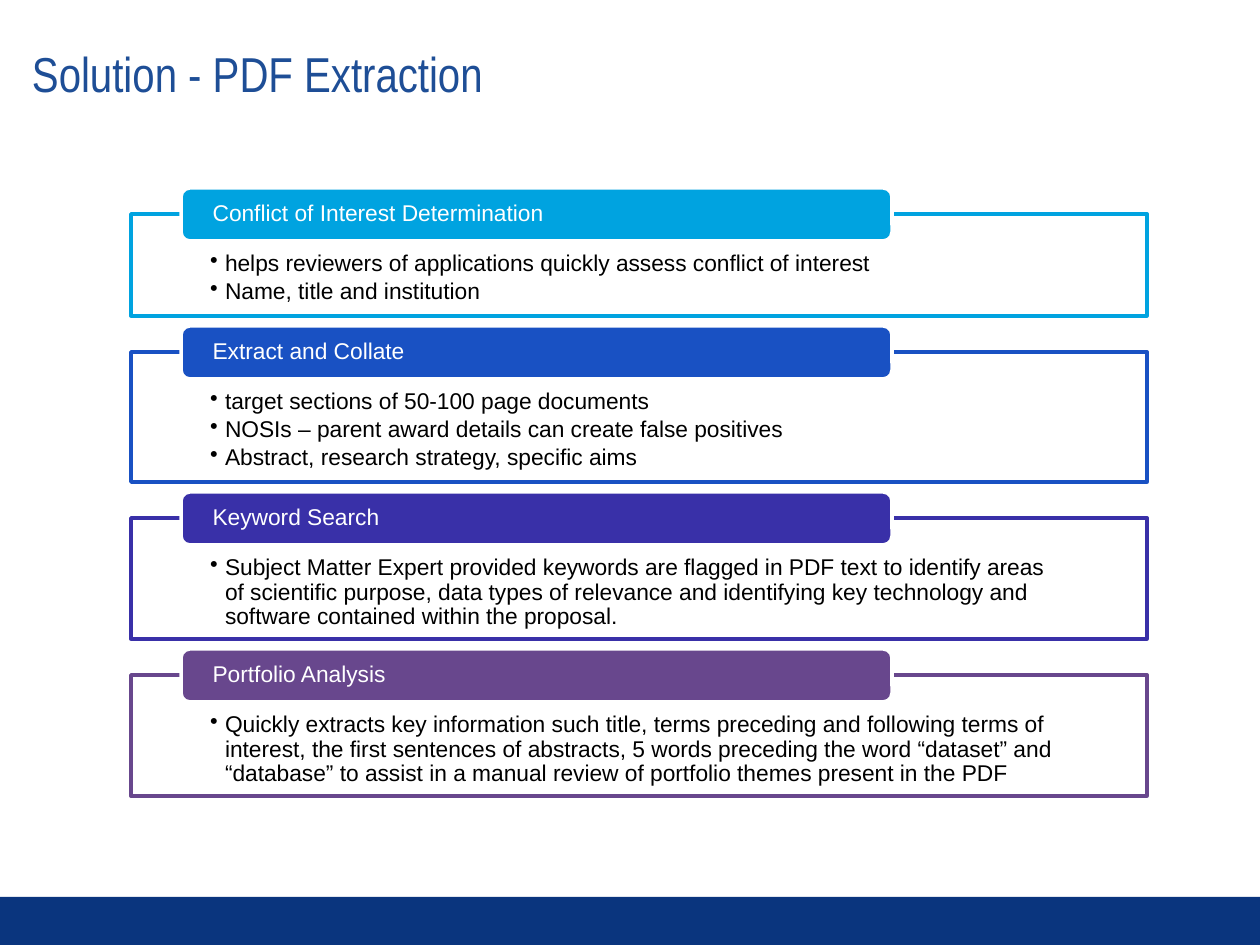
"""Builds the "Solution - PDF Extraction" slide: four titled boxes of bullets."""
from lxml.etree import SubElement
from pptx import Presentation
from pptx.dml.color import RGBColor
from pptx.enum.shapes import MSO_SHAPE
from pptx.enum.text import MSO_ANCHOR, PP_ALIGN
from pptx.oxml.ns import qn
from pptx.util import Pt

PX = 914400 / 126
WHITE = RGBColor(0xFF, 0xFF, 0xFF)
BLACK = RGBColor(0x00, 0x00, 0x00)
NAVY = RGBColor(0x0A, 0x35, 0x7E)
TITLE_BLUE = RGBColor(0x1E, 0x4E, 0x96)
CYAN = RGBColor(0x00, 0xA3, 0xE0)
BLUE = RGBColor(0x19, 0x51, 0xC3)
INDIGO = RGBColor(0x39, 0x30, 0xA8)
PURPLE = RGBColor(0x68, 0x47, 0x8D)

BOX_LEFT, BOX_WIDTH, BOX_GAP = 131, 1016, 36
TAB_LEFT, TAB_WIDTH, TAB_HEIGHT, TAB_RISE = 181, 711, 53, 26
INDENT = 15

SECTIONS = [
    ("Conflict of Interest Determination", CYAN, 102, [
        "helps reviewers of applications quickly assess conflict of interest",
        "Name, title and institution"]),
    ("Extract and Collate", BLUE, 130, [
        "target sections of 50-100 page documents",
        "NOSIs – parent award details can create false positives",
        "Abstract, research strategy, specific aims"]),
    ("Keyword Search", INDIGO, 121, [
        "Subject Matter Expert provided keywords are flagged in PDF text to "
        "identify areas of scientific purpose, data types of relevance and "
        "identifying key technology and software contained within the proposal."]),
    ("Portfolio Analysis", PURPLE, 121, [
        "Quickly extracts key information such title, terms preceding and "
        "following terms of interest, the first sentences of abstracts, 5 words "
        "preceding the word “dataset” and “database” to assist in a manual "
        "review of portfolio themes present in the PDF"]),
]


def add_block(kind, box, fill, line=None):
    sp = s.shapes.add_shape(kind, *[round(v * PX) for v in box])
    sp.shadow.inherit = False
    sp.fill.solid()
    sp.fill.fore_color.rgb = fill
    if line is None:
        sp.line.fill.background()
    else:
        sp.line.color.rgb = line
        sp.line.width = Pt(2)
    return sp


def set_text(sp, text, insets, anchor, size, color, font="Arial", after=0):
    tf = sp.text_frame
    tf.word_wrap = True
    tf.vertical_anchor = anchor
    tf.margin_left, tf.margin_top, tf.margin_right, tf.margin_bottom = [
        round(v * PX) for v in insets]
    tf.text = text
    for p in tf.paragraphs:
        p.alignment = PP_ALIGN.LEFT
        p.line_spacing = 0.9
        p.space_after = Pt(after)
        for r in p.runs:
            r.font.name = font
            r.font.size = Pt(size)
            r.font.color.rgb = color
    return tf


prs = Presentation()
prs.slide_width = round(1260 * PX)
prs.slide_height = round(945 * PX)
s = prs.slides.add_slide(prs.slide_layouts[6])

add_block(MSO_SHAPE.RECTANGLE, (0, 897, 1260, 48), NAVY)
title = s.shapes.add_textbox(*[round(v * PX) for v in (19, 24, 1218, 105)])
set_text(title, "Solution - PDF Extraction", (13, 13, 25, 13),
         MSO_ANCHOR.MIDDLE, 28, TITLE_BLUE, "Arial Narrow")

top = 214
for heading, color, height, bullets in SECTIONS:
    box = add_block(MSO_SHAPE.RECTANGLE, (BOX_LEFT, top, BOX_WIDTH, height),
                    WHITE, color)
    tf = set_text(box, "\n".join(bullets), (79, 38, 79, 13),
                  MSO_ANCHOR.TOP, 13, BLACK, after=2)
    for p in tf.paragraphs:
        p.level = 1
        pPr = p._p.get_or_add_pPr()
        pPr.set("marL", str(round(INDENT * PX)))
        pPr.set("indent", str(round(-INDENT * PX)))
        SubElement(pPr, qn("a:buChar"), char="•")

    tab = add_block(MSO_SHAPE.ROUNDED_RECTANGLE,
                    (TAB_LEFT, top - TAB_RISE, TAB_WIDTH, TAB_HEIGHT),
                    color, WHITE)
    set_text(tab, heading, (29, 0, 29, 0), MSO_ANCHOR.MIDDLE, 13, WHITE)
    top += height + BOX_GAP

prs.save("out.pptx")
